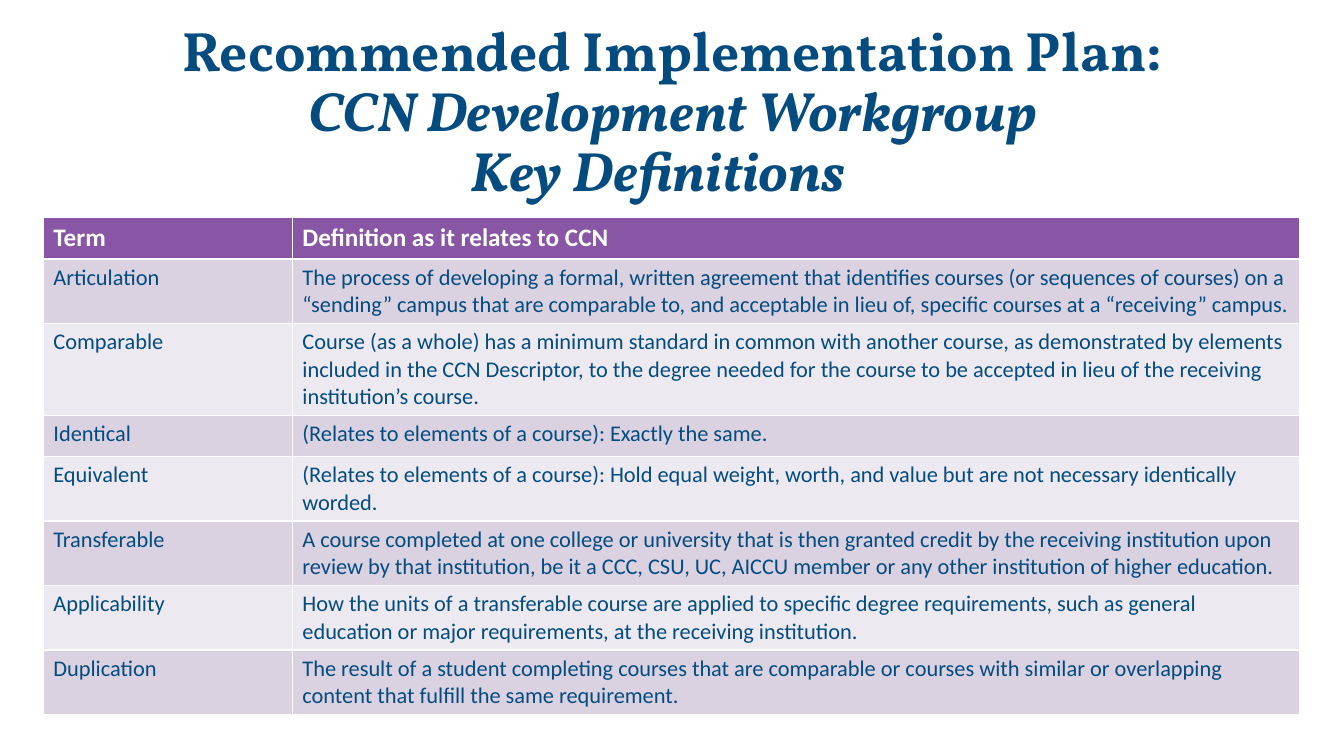
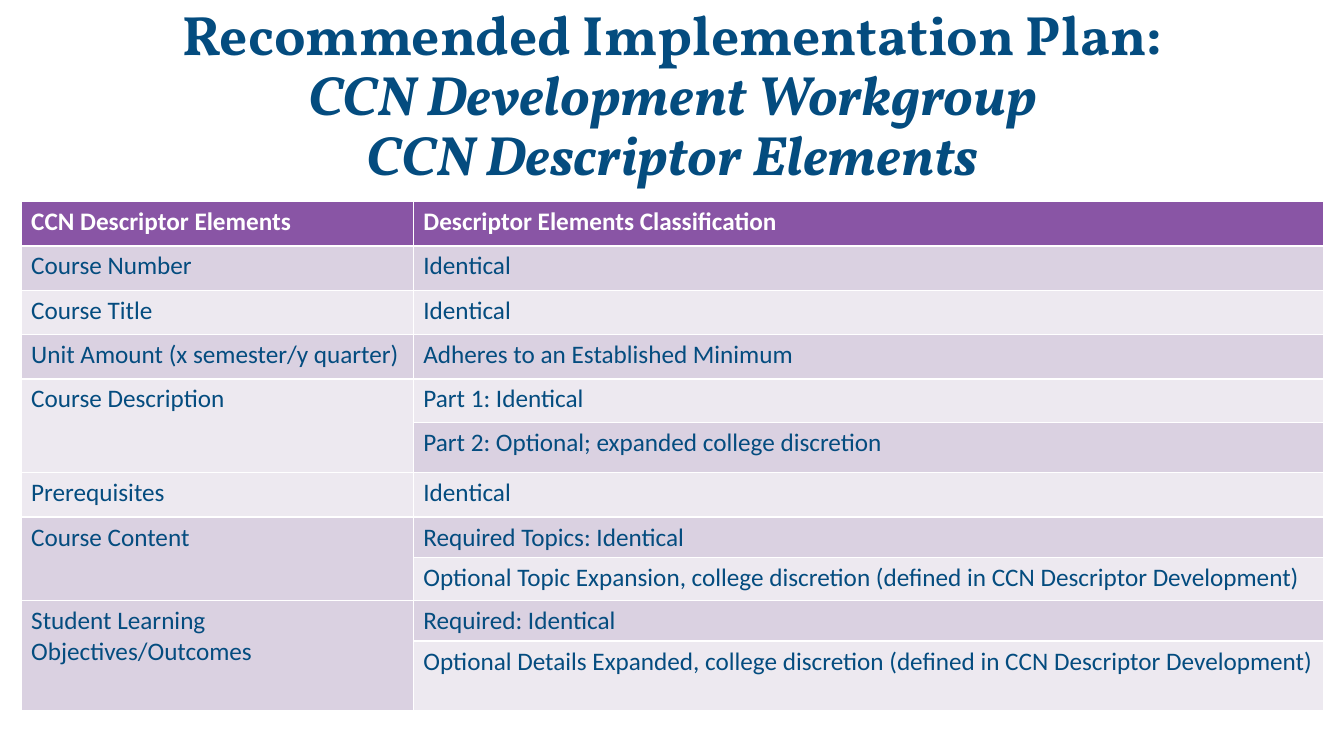
from pptx import Presentation
from pptx.dml.color import RGBColor
from pptx.enum.text import MSO_ANCHOR, PP_ALIGN
from pptx.util import Inches, Pt

NAVY = RGBColor(0x04, 0x4C, 0x7F)
PURPLE = RGBColor(0x89, 0x55, 0xA5)
WHITE = RGBColor(0xFF, 0xFF, 0xFF)
BANDS = RGBColor(0xDA, 0xD1, 0xE1), RGBColor(0xED, 0xE9, 0xF0)

TITLE_FONT = {"name": "Vollkorn", "size": Pt(39.6), "bold": True}
HEADER_FONT = {"name": "Calibri", "size": Pt(18), "bold": True}
BODY_FONT = {"name": "Calibri", "bold": False}
TITLE_LINES = ["Recommended Implementation Plan:", "CCN Development Workgroup"]

# A row is (height, first cell, second cell); None continues the cell above.
SLIDES = [
    {
        "subject": "Key Definitions\t",
        "title_box": (0.92, 0.4, 11.5, 1.45),
        "table_at": (0.43, 2.16),
        "columns": (2.47, 9.99),
        "body_size": 16,
        "rows": [
            (0.41, "Term", "Definition as it relates to CCN"),
            (0.64, "Articulation",
             "The process of developing a formal, written agreement that identifies courses "
             "(or sequences of courses) on a “sending” campus that are comparable to, and "
             "acceptable in lieu of, specific courses at a “receiving” campus."),
            (0.91, "Comparable",
             "Course (as a whole) has a minimum standard in common with another course, as "
             "demonstrated by elements included in the CCN Descriptor, to the degree needed "
             "for the course to be accepted in lieu of the receiving institution’s course."),
            (0.41, "Identical", "(Relates to elements of a course): Exactly the same."),
            (0.64, "Equivalent",
             "(Relates to elements of a course): Hold equal weight, worth, and value but are "
             "not necessary identically worded."),
            (0.64, "Transferable",
             "A course completed at one college or university that is then granted credit by "
             "the receiving institution upon review by that institution, be it a CCC, CSU, UC, "
             "AICCU member or any other institution of higher education."),
            (0.64, "Applicability",
             "How the units of a transferable course are applied to specific degree "
             "requirements, such as general education or major requirements, at the receiving "
             "institution."),
            (0.64, "Duplication",
             "The result of a student completing courses that are comparable or courses with "
             "similar or overlapping content that fulfill the same requirement."),
        ],
    },
    {
        "subject": "CCN Descriptor Elements",
        "title_box": (0.92, 0.49, 11.5, 0.96),
        "table_at": (0.21, 2),
        "columns": (3.89, 9.03),
        "body_size": 18,
        "rows": [
            (0.44, "CCN Descriptor Elements", "Descriptor Elements Classification"),
            (0.44, "Course Number", "Identical"),
            (0.44, "Course Title", "Identical"),
            (0.44, "Unit Amount (x semester/y quarter)", "Adheres to an Established Minimum"),
            (0.43, "Course Description", "Part 1: Identical"),
            (0.5, None, "Part 2: Optional; expanded college discretion"),
            (0.44, "Prerequisites", "Identical"),
            (0.4, "Course Content", "Required Topics: Identical"),
            (0.43, None, "Optional Topic Expansion, college discretion "
                         "(defined in CCN Descriptor Development)"),
            (0.4, "Student Learning Objectives/Outcomes", "Required: Identical"),
            (0.69, None, "Optional Details Expanded, college discretion "
                         "(defined in CCN Descriptor Development)"),
        ],
    },
]


def add_run(p, text, color, **font):
    r = p.add_run()
    r.text = text
    r.font.color.rgb = color
    for name, value in font.items():
        setattr(r.font, name, value)


def add_title(s, subject, box):
    tf = s.shapes.add_textbox(*map(Inches, box)).text_frame
    tf.word_wrap = True
    tf.vertical_anchor = MSO_ANCHOR.MIDDLE
    p = tf.paragraphs[0]
    p.alignment = PP_ALIGN.CENTER
    p.line_spacing = 0.9
    for i, line in enumerate(TITLE_LINES + [subject]):
        if i:
            p.add_line_break()
        add_run(p, line, NAVY, italic=i > 0, **TITLE_FONT)


def add_banded_table(s, at, columns, rows, body_size):
    """Add a table with a purple header; its default style draws the white rules."""
    size = sum(columns), sum(row[0] for row in rows)
    table = s.shapes.add_table(len(rows), len(columns), *map(Inches, at + size)).table
    for column, width in zip(table.columns, columns):
        column.width = Inches(width)
    for i, (height, *texts) in enumerate(rows):
        table.rows[i].height = Inches(height)
        fill = BANDS[(i - 1) % 2] if i else PURPLE
        color = NAVY if i else WHITE
        font = {**BODY_FONT, "size": Pt(body_size)} if i else HEADER_FONT
        for j, text in enumerate(texts):
            cell = table.cell(i, j)
            cell.fill.solid()
            cell.fill.fore_color.rgb = fill
            if text is None:
                table.cell(i - 1, j).merge(cell)
            else:
                add_run(cell.text_frame.paragraphs[0], text, color, **font)


def main():
    prs = Presentation()
    prs.slide_width, prs.slide_height = Inches(13.33), Inches(7.5)
    for content in SLIDES:
        s = prs.slides.add_slide(prs.slide_layouts[6])
        add_title(s, content["subject"], content["title_box"])
        add_banded_table(s, content["table_at"], content["columns"],
                         content["rows"], content["body_size"])
    prs.save("out.pptx")


if __name__ == "__main__":
    main()
